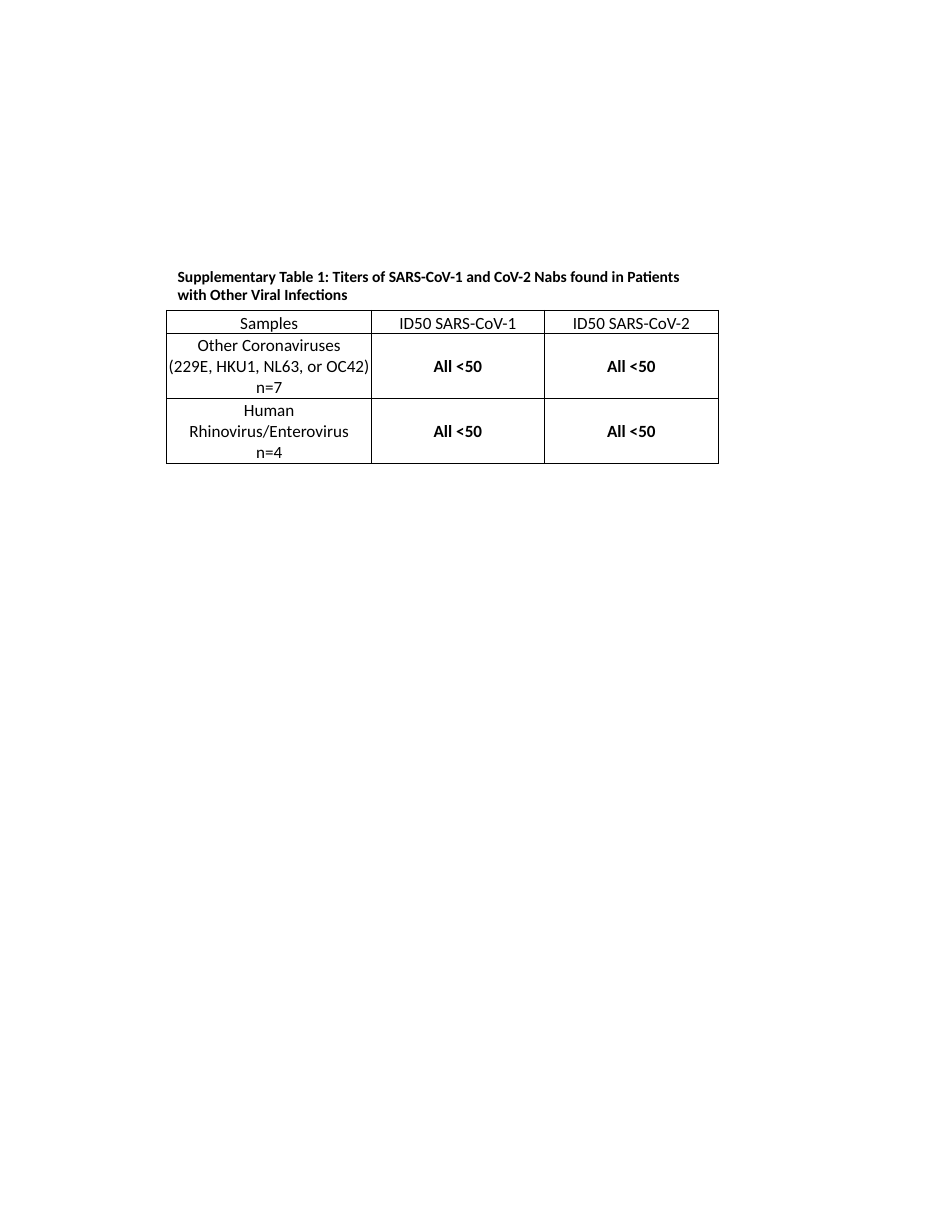
from lxml.etree import SubElement
from pptx import Presentation
from pptx.dml.color import RGBColor
from pptx.enum.text import MSO_ANCHOR, MSO_AUTO_SIZE, PP_ALIGN
from pptx.oxml.ns import qn
from pptx.util import Cm, Pt

FONT = "Calibri"
BLACK = "000000"
TITLE = ("Supplementary Table 1: Titers of SARS-CoV-1 and CoV-2 Nabs "
         "found in Patients with Other Viral Infections")
COLUMN_WIDTHS = [4.65, 3.91, 3.96]
ROW_HEIGHT = 0.53
ROWS = [
    ["Samples", "ID50 SARS-CoV-1", "ID50 SARS-CoV-2"],
    ["Other Coronaviruses\n(229E, HKU1, NL63, or OC42)\nn=7", "All <50", "All <50"],
    ["Human Rhinovirus/Enterovirus\nn=4", "All <50", "All <50"],
]


def color(hex_value):
    return RGBColor.from_string(hex_value)


def add_span(para, text, size, bold=False):
    span = para.add_run()
    span.text = text
    span.font.name = FONT
    span.font.size = Pt(size)
    span.font.bold = bold
    span.font.color.rgb = color(BLACK)


def add_title(page):
    box = page.shapes.add_textbox(Cm(3.78), Cm(5.92), Cm(12.34), Cm(1.12))
    frame = box.text_frame
    frame.word_wrap = True
    frame.auto_size = MSO_AUTO_SIZE.SHAPE_TO_FIT_TEXT
    add_span(frame.paragraphs[0], TITLE, 10, bold=True)


def set_borders(cell, widths):
    """Draw solid borders; widths are points for left, right, top, bottom."""
    properties = cell._tc.get_or_add_tcPr()
    for side, width in zip("LRTB", widths):
        line = SubElement(properties, qn(f"a:ln{side}"), w=str(Pt(width)))
        fill = SubElement(line, qn("a:solidFill"))
        SubElement(fill, qn("a:srgbClr"), val=BLACK)


def fill_cell(cell, text, is_value):
    cell.margin_left = cell.margin_right = cell.margin_top = Cm(0.03)
    cell.margin_bottom = 0
    cell.vertical_anchor = MSO_ANCHOR.MIDDLE if is_value else MSO_ANCHOR.BOTTOM
    frame = cell.text_frame
    for index, line in enumerate(text.split("\n")):
        para = frame.add_paragraph() if index else frame.paragraphs[0]
        para.alignment = PP_ALIGN.CENTER
        add_span(para, line, 11, bold=is_value)


def add_titer_table(page):
    last_column = len(COLUMN_WIDTHS) - 1
    table = page.shapes.add_table(
        len(ROWS), len(COLUMN_WIDTHS), Cm(3.78), Cm(7.04),
        Cm(sum(COLUMN_WIDTHS)), Cm(ROW_HEIGHT * len(ROWS))).table
    table.first_row = table.horz_banding = False
    for column, width in zip(table.columns, COLUMN_WIDTHS):
        column.width = Cm(width)
    for row_index, texts in enumerate(ROWS):
        table.rows[row_index].height = Cm(ROW_HEIGHT)
        for column_index, text in enumerate(texts):
            cell = table.cell(row_index, column_index)
            fill_cell(cell, text, is_value=row_index > 0 and column_index > 0)
            set_borders(cell, [1 if column_index == 0 else 0.5,
                               1 if column_index == last_column else 0.5,
                               1 if row_index == 0 else 0.5,
                               0.5])
            cell.fill.background()


def main():
    deck = Presentation()
    deck.slide_width, deck.slide_height = Cm(21.59), Cm(27.94)
    page = deck.slides.add_slide(deck.slide_layouts[6])
    add_titer_table(page)
    add_title(page)
    deck.save("out.pptx")


if __name__ == "__main__":
    main()
